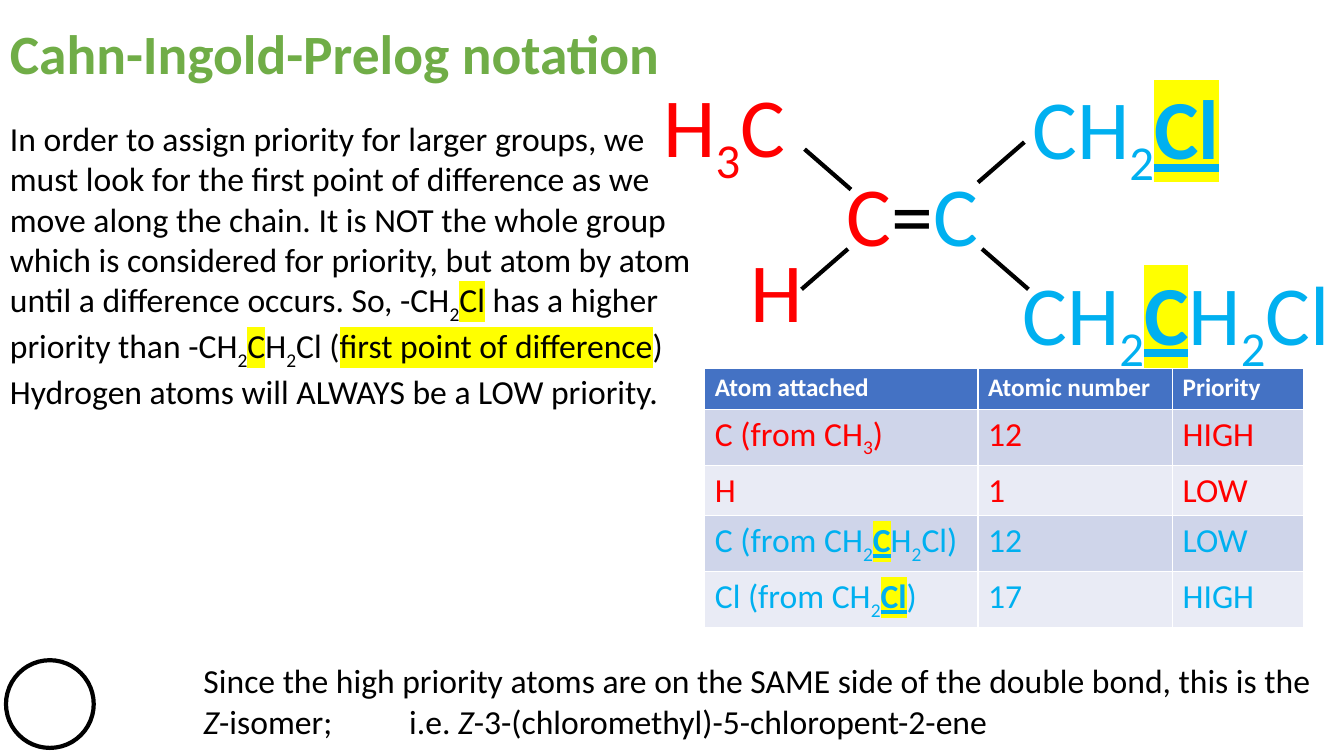
from dataclasses import dataclass

from lxml.etree import SubElement
from pptx import Presentation
from pptx.dml.color import RGBColor
from pptx.enum.shapes import MSO_CONNECTOR, MSO_SHAPE
from pptx.enum.text import MSO_ANCHOR
from pptx.oxml.ns import qn
from pptx.util import Inches, Pt


@dataclass(frozen=True)
class Theme:
    font: str = "Calibri"
    title_size: float = 39.6
    body_size: float = 24
    header_size: float = 18
    formula_size: float = 60
    line_width: float = 3
    title: str = "70AD47"
    ink: str = "000000"
    paper: str = "FFFFFF"
    left_group: str = "FF0000"
    right_group: str = "00B0F0"
    marker: str = "FFFF00"
    header_fill: str = "4472C4"
    bands: tuple = ("CFD5EA", "E9EBF5")


THEME = Theme()
SUB = dict(baseline=-25000)
MARK = dict(highlight=THEME.marker)
KEY = dict(bold=True, underline=True, **MARK)
ITALIC = dict(italic=True)
RED = dict(color=THEME.left_group)
BLUE = dict(color=THEME.right_group)

CHLOROMETHYL = ["CH", ("2", SUB), ("Cl", KEY)]
CHLOROETHYL = ["CH", ("2", SUB), ("C", KEY), "H", ("2", SUB), "Cl"]

EXPLANATION = [
    ["In order to assign priority for larger groups, we must look for the first "
     "point of difference as we move along the chain. It is NOT the whole group "
     "which is considered for priority, but atom by atom until a difference "
     "occurs. So, -CH", ("2", SUB), ("Cl", MARK),
     " has a higher priority than -CH", ("2", SUB), ("C", MARK), "H", ("2", SUB),
     "Cl (", ("first point of difference", MARK), ")"],
    ["Hydrogen atoms will ALWAYS be a LOW priority."],
]
CONCLUSION = [[
    "Since the high priority atoms are on the SAME side of the double bond, "
    "this is the ", ("Z", ITALIC), "-isomer;\ti.e. ", ("Z", ITALIC),
    "-3-(chloromethyl)-5-chloropent-2-ene",
]]
HEADINGS = ["Atom attached", "Atomic number", "Priority"]
PRIORITIES = [
    (["C (from CH", ("3", SUB), ")"], "12", "HIGH", RED),
    (["H"], "1", "LOW", RED),
    (["C (from ", *CHLOROETHYL, ")"], "12", "LOW", BLUE),
    (["Cl (from ", *CHLOROMETHYL, ")"], "17", "HIGH", BLUE),
]
FORMULAS = [
    ((8.3, 1.56, 1.67), [("C", RED), ("=", dict(color=THEME.ink)), ("C", BLUE)], {}),
    ((6.48, 0.68, 2.16), ["H", ("3", SUB), "C"], RED),
    ((7.35, 2.32, 0.57), ["H"], RED),
    ((10.14, 0.7, 2.7), CHLOROMETHYL, BLUE),
    ((10.04, 2.54, 3.29), CHLOROETHYL, BLUE),
]
BONDS = [
    ((9.7, 1.81), (10.16, 1.41)),
    ((7.95, 2.87), (8.41, 2.47)),
    ((10.2, 2.87), (9.74, 2.47)),
    ((8.44, 1.88), (7.98, 1.48)),
]


def add_run(paragraph, text, size=THEME.body_size, color=THEME.ink, bold=False,
            italic=False, underline=False, baseline=0, highlight=None):
    run = paragraph.add_run()
    run.text = text
    font = run.font
    font.size, font.name = Pt(size), THEME.font
    font.bold, font.italic, font.underline = bold, italic, underline
    font.color.rgb = RGBColor.from_string(color)
    properties = run._r.get_or_add_rPr()
    if baseline:
        properties.set("baseline", str(baseline))
    if highlight:
        marker = SubElement(properties, qn("a:highlight"))
        SubElement(marker, qn("a:srgbClr")).set("val", highlight)
        properties.find(qn("a:latin")).addprevious(marker)


def write(frame, paragraphs, **style):
    """Fill a frame; each paragraph lists strings or (string, format) pairs."""
    for index, pieces in enumerate(paragraphs):
        paragraph = frame.add_paragraph() if index else frame.paragraphs[0]
        for piece in pieces:
            text, changes = (piece, {}) if isinstance(piece, str) else piece
            add_run(paragraph, text, **{**style, **changes})


class SlideBuilder:
    def __init__(self, slide, theme):
        self.shapes = slide.shapes
        self.theme = theme

    def text(self, box, paragraphs, wrap=True, **style):
        frame = self.shapes.add_textbox(*map(Inches, box)).text_frame
        frame.word_wrap = wrap
        write(frame, paragraphs, **style)
        return frame

    def title(self, box, text):
        frame = self.text(box, [[text]], size=self.theme.title_size,
                          color=self.theme.title, bold=True)
        frame.vertical_anchor = MSO_ANCHOR.MIDDLE
        frame.paragraphs[0].line_spacing = 0.9

    def circle(self, left, top, diameter):
        circle = self.shapes.add_shape(
            MSO_SHAPE.OVAL, *map(Inches, (left, top, diameter, diameter)))
        circle.shadow.inherit = False
        circle.fill.solid()
        circle.fill.fore_color.rgb = RGBColor.from_string(self.theme.paper)
        self.outline(circle.line)

    def bond(self, start, end):
        bond = self.shapes.add_connector(
            MSO_CONNECTOR.STRAIGHT, *map(Inches, (*start, *end)))
        self.outline(bond.line)
        SubElement(bond._element.spPr, qn("a:effectLst"))

    def outline(self, line):
        line.color.rgb = RGBColor.from_string(self.theme.ink)
        line.width = Pt(self.theme.line_width)

    def table(self, left, top, widths, row_height, headings, rows):
        size = (sum(widths), row_height * (len(rows) + 1))
        table = self.shapes.add_table(
            len(rows) + 1, len(widths), *map(Inches, (left, top, *size))).table
        for column, width in zip(table.columns, widths):
            column.width = Inches(width)
        for column, heading in enumerate(headings):
            self.cell(table.cell(0, column), [heading], self.theme.header_fill,
                      size=self.theme.header_size, color=self.theme.paper, bold=True)
        for index, (atom, number, priority, style) in enumerate(rows):
            band = self.theme.bands[index % 2]
            for column, pieces in enumerate((atom, [number], [priority])):
                self.cell(table.cell(index + 1, column), pieces, band, **style)

    def cell(self, cell, pieces, fill, **style):
        cell.fill.solid()
        cell.fill.fore_color.rgb = RGBColor.from_string(fill)
        write(cell.text_frame, [pieces], **style)


def add_tab_stop(paragraph, position):
    tabs = SubElement(paragraph._p.get_or_add_pPr(), qn("a:tabLst"))
    tab = SubElement(tabs, qn("a:tab"))
    tab.set("pos", str(Inches(position)))
    tab.set("algn", "l")


def main():
    presentation = Presentation()
    presentation.slide_width, presentation.slide_height = Inches(13.33), Inches(7.5)
    slide = presentation.slides.add_slide(presentation.slide_layouts[6])
    builder = SlideBuilder(slide, THEME)

    builder.circle(0.06, 6.55, 0.87)
    builder.title((0, 0, 6.96, 1.12), "Cahn-Ingold-Prelog notation")
    builder.table(6.99, 3.65, (2.71, 1.93, 1.3), 0.41, HEADINGS, PRIORITIES)
    builder.text((0, 1.12, 7.04, 4.14), EXPLANATION)
    conclusion = builder.text((1.92, 6.5, 11.24, 0.91), CONCLUSION)
    add_tab_stop(conclusion.paragraphs[0], 2.04)

    for bond in BONDS:
        builder.bond(*bond)
    for place, pieces, style in FORMULAS:
        builder.text((*place, 1.11), [pieces], wrap=False,
                     size=THEME.formula_size, **style)

    presentation.save("out.pptx")


if __name__ == "__main__":
    main()
